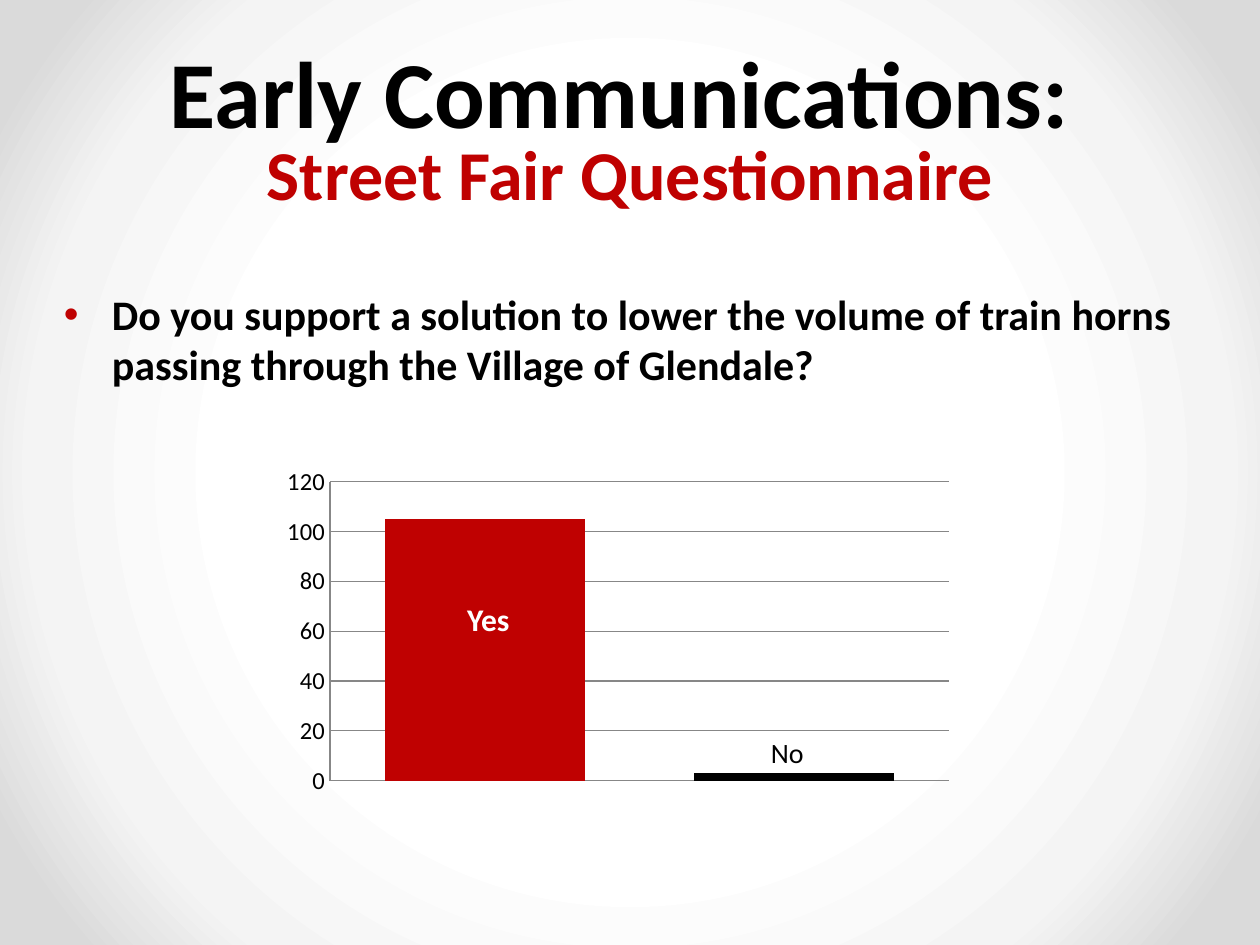
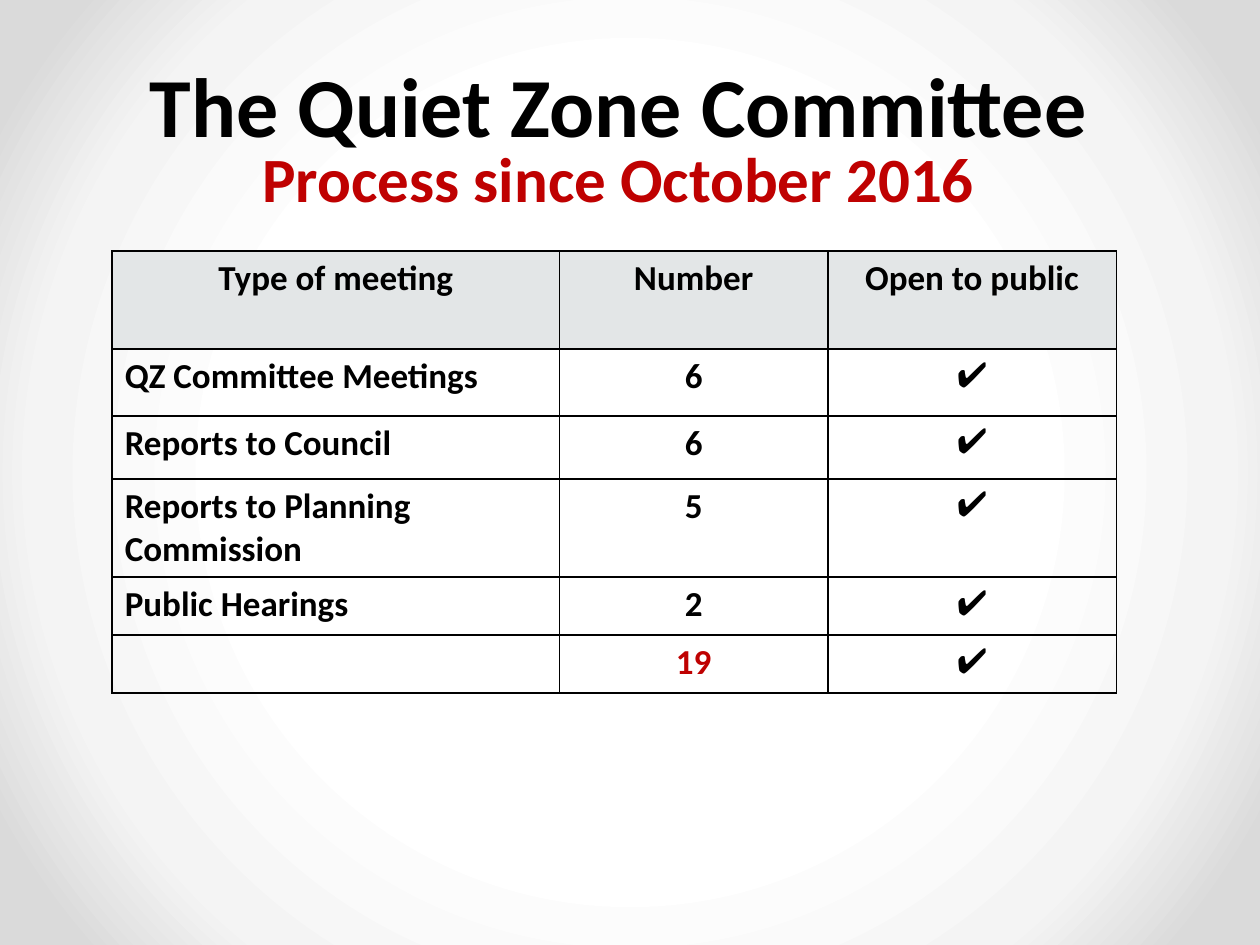
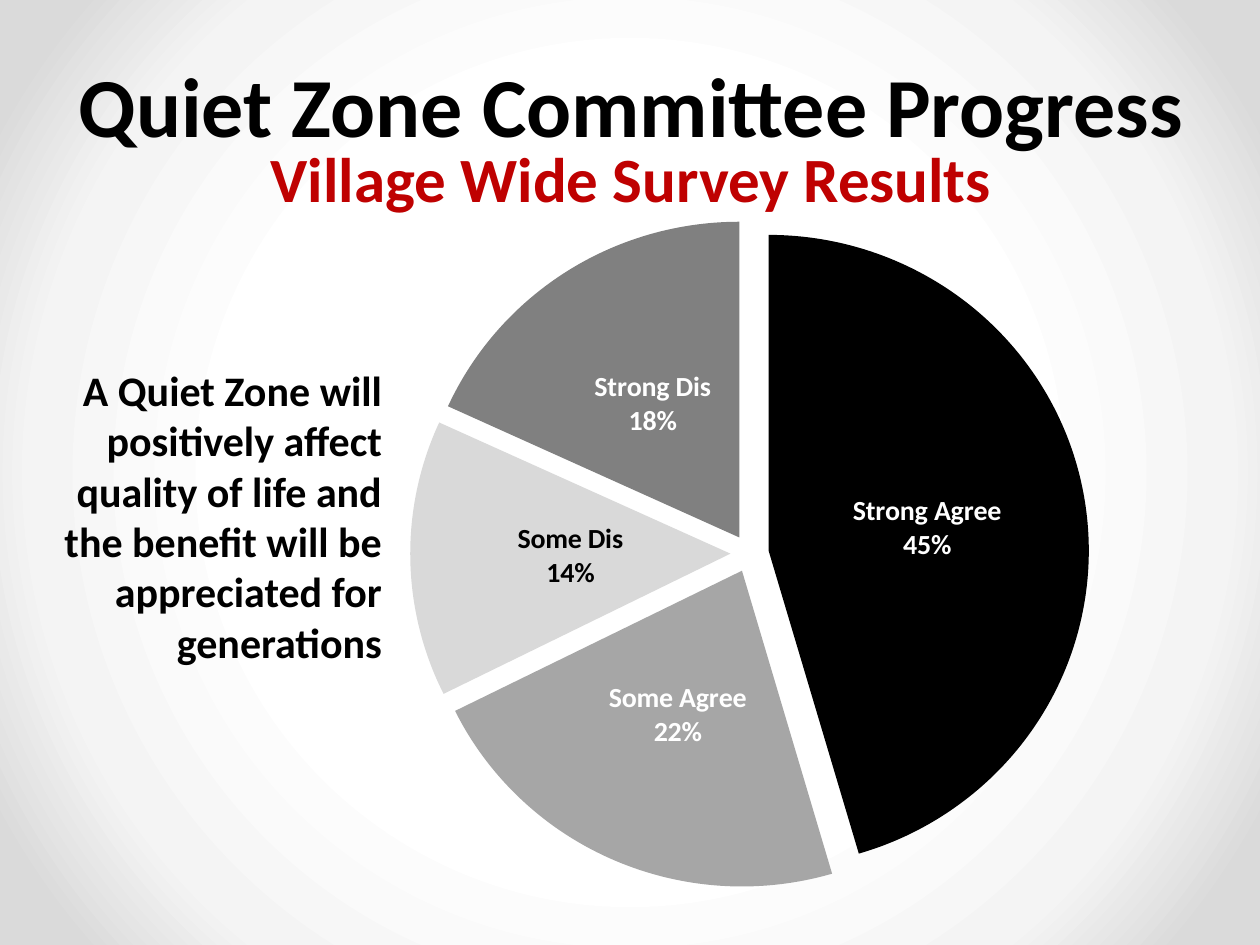
from pptx import Presentation
from pptx.chart.data import CategoryChartData
from pptx.dml.color import RGBColor
from pptx.enum.chart import XL_CHART_TYPE, XL_LABEL_POSITION, XL_TICK_MARK
from pptx.enum.text import MSO_ANCHOR, PP_ALIGN
from pptx.oxml import parse_xml
from pptx.oxml.ns import nsdecls
from pptx.util import Inches, Pt

FONT = "Calibri"
COLORS = {
    "black": "000000", "white": "FFFFFF", "red": "BF0101",
    "header": "E3E6E7", "grid": "878787",
    "light": "D9D9D9", "mid": "A6A6A6", "dark": "808080",
}
BACKDROP_STOPS = [(50, "FFFFFF"), (76, "F4F4F4"), (92, "DADADA")]


def rgb(name):
    return RGBColor.from_string(COLORS[name])


def inches(box):
    return [Inches(length) for length in box]


def style_font(font, size, color="black", bold=False, name=FONT):
    font.name, font.size, font.bold = name, Pt(size), bold
    font.color.rgb = rgb(color)


def write(frame, text, align=PP_ALIGN.LEFT, spacing=None, **font_format):
    """Add a line to the last paragraph of a text frame."""
    paragraph = frame.paragraphs[-1]
    if paragraph.runs:
        paragraph.add_line_break()
    paragraph.alignment = align
    if spacing:
        paragraph.line_spacing = spacing
    run = paragraph.add_run()
    run.text = text
    style_font(run.font, **font_format)


def text_frame(slide, box, anchor=MSO_ANCHOR.TOP):
    frame = slide.shapes.add_textbox(*inches(box)).text_frame
    frame.word_wrap = True
    frame.vertical_anchor = anchor
    return frame


# Shared parts
def set_backdrop(master):
    master.background.fill.gradient()
    stops = "".join(
        f'<a:gs pos="{pos * 1000}"><a:srgbClr val="{color}"/></a:gs>'
        for pos, color in BACKDROP_STOPS)
    gradient = parse_xml(
        f'<a:gradFill {nsdecls("a")} rotWithShape="1"><a:gsLst>{stops}</a:gsLst>'
        '<a:path path="circle"><a:fillToRect l="50000" t="50000" r="50000" b="50000"/>'
        '</a:path></a:gradFill>')
    old_gradient = master.element.xpath("p:cSld/p:bg/p:bgPr/a:gradFill")[0]
    old_gradient.getparent().replace(old_gradient, gradient)


def add_title(slide, box, heading, subheading, size=48, subsize=36):
    frame = text_frame(slide, box, MSO_ANCHOR.BOTTOM)
    centred = {"align": PP_ALIGN.CENTER, "spacing": 0.8, "bold": True}
    write(frame, heading, size=size, **centred)
    write(frame, subheading, size=subsize, color="red", **centred)


def add_single_series_chart(slide, box, kind, categories, values, point_colors):
    data = CategoryChartData(number_format="0")
    data.categories = categories
    data.add_series("Series 1", values)
    chart = slide.shapes.add_chart(kind, *inches(box), data).chart
    chart.has_title = chart.has_legend = False
    style_font(chart.font, 18)
    series = chart.plots[0].series[0]
    for index, color in enumerate(point_colors):
        fill = series.points[index].format.fill
        fill.solid()
        fill.fore_color.rgb = rgb(color)
    return chart


# Questionnaire slide
def add_question(slide, box, question):
    frame = text_frame(slide, box)
    properties = frame.paragraphs[0]._p.get_or_add_pPr()
    properties.set("marL", str(Inches(0.38)))
    properties.set("indent", str(-Inches(0.38)))
    properties.append(parse_xml(
        f'<a:buClr {nsdecls("a")}><a:srgbClr val="{COLORS["red"]}"/></a:buClr>'))
    properties.append(parse_xml(f'<a:buFont {nsdecls("a")} typeface="Arial"/>'))
    properties.append(parse_xml(f'<a:buChar {nsdecls("a")} char="•"/>'))
    write(frame, question, size=24, bold=True)


def add_answer_columns(slide, box):
    chart = add_single_series_chart(
        slide, box, XL_CHART_TYPE.COLUMN_CLUSTERED, ["1", "2"], [105, 3],
        ["red", "black"])
    chart.plots[0].gap_width = 55
    chart.plots[0].vary_by_categories = False
    chart.category_axis.visible = False
    votes = chart.value_axis
    votes.minimum_scale, votes.maximum_scale, votes.major_unit = 0, 120, 20
    votes.major_tick_mark = votes.minor_tick_mark = XL_TICK_MARK.NONE
    style_font(votes.tick_labels.font, 14)
    for line in (votes.format.line, votes.major_gridlines.format.line):
        line.color.rgb = rgb("grid")
        line.width = Pt(0.75)
    # Answers, placed from the chart's corner
    left, top = box[:2]
    write(text_frame(slide, (left + 1.44, top + 1.06, 0.62, 0.4)), "Yes",
          size=18, color="white", bold=True)
    write(text_frame(slide, (left + 3.85, top + 2.14, 0.69, 0.37)), "No", size=16)


# Committee slide
def add_borders(cell):
    properties = cell._tc.get_or_add_tcPr()
    for index, side in enumerate(("lnL", "lnR", "lnT", "lnB")):
        properties.insert(index, parse_xml(
            f'<a:{side} {nsdecls("a")} w="{Pt(1)}"><a:solidFill>'
            f'<a:srgbClr val="{COLORS["black"]}"/></a:solidFill></a:{side}>'))


def add_meeting_table(slide, left, top):
    headings = ("Type of meeting", "Number", "Open to public")
    meetings = [("QZ Committee Meetings", 6), ("Reports to Council", 6),
                ("Reports to Planning Commission", 5), ("Public Hearings", 2)]
    total = sum(number for _, number in meetings)
    rows = [headings] + [(name, str(number), "✔")
                         for name, number in meetings + [("", total)]]
    widths = (3.55, 2.13, 2.29)
    heights = (0.78, 0.53, 0.5, 0.78, 0.46, 0.46)
    table = slide.shapes.add_table(
        len(rows), len(widths),
        *inches((left, top, sum(widths), sum(heights)))).table
    table.first_row = table.horz_banding = False
    for column, width in zip(table.columns, widths):
        column.width = Inches(width)
    for r, (row, height) in enumerate(zip(rows, heights)):
        table.rows[r].height = Inches(height)
        for c, text in enumerate(row):
            cell = table.cell(r, c)
            if r == 0:
                cell.fill.solid()
                cell.fill.fore_color.rgb = rgb("header")
            else:
                cell.fill.background()
            add_borders(cell)
            is_check = text == "✔"
            is_total = r == len(rows) - 1 and c == 1
            if text:
                write(cell.text_frame, text, size=20, bold=not is_check,
                      align=PP_ALIGN.CENTER if r == 0 or c else PP_ALIGN.LEFT,
                      color="red" if is_total else "black",
                      name="Arial" if is_check else FONT)


# Survey slide
def add_survey_pie(slide, box):
    chart = add_single_series_chart(
        slide, box, XL_CHART_TYPE.PIE,
        ["Strong Agree", "Some Agree", "Some Dis", "Strong Dis"],
        [45, 22, 14, 18], ["black", "mid", "light", "dark"])
    chart.plots[0].vary_by_categories = True
    series = chart.plots[0].series[0]
    for slice_fill in series._element.xpath("c:dPt/c:spPr"):
        slice_fill.addprevious(parse_xml(f'<c:explosion {nsdecls("c")} val="6"/>'))
    labels = series.data_labels
    labels.number_format, labels.number_format_is_linked = "0%", False
    light_label = series.points[2].data_label
    for label, color in ((labels, "white"), (light_label, "black")):
        style_font(label.font, 16, color, bold=True)
        label.position = XL_LABEL_POSITION.CENTER
    shown = {"showVal": 0, "showCatName": 1, "showPercent": 1}
    labels.show_value, labels.show_category_name, labels.show_percentage = (
        False, True, True)
    for flag, value in shown.items():
        for element in labels._element.xpath(f"c:dLbl/c:{flag}"):
            element.set("val", str(value))
    for element in labels._element.xpath(".//c:showBubbleSize"):
        element.addnext(parse_xml(f'<c:separator {nsdecls("c")}>\n</c:separator>'))
    chart._chartSpace.xpath("c:chart/c:plotArea")[0].insert(0, parse_xml(
        f'<c:layout {nsdecls("c")}><c:manualLayout><c:layoutTarget val="inner"/>'
        '<c:xMode val="edge"/><c:yMode val="edge"/><c:x val="0"/><c:y val="0.01"/>'
        '<c:w val="1"/><c:h val="0.95"/></c:manualLayout></c:layout>'))
    for spare in chart._chartSpace.xpath("c:chart/c:plotArea/c:layout")[1:]:
        spare.getparent().remove(spare)


def main():
    prs = Presentation()
    prs.slide_width, prs.slide_height = Inches(10), Inches(7.5)
    set_backdrop(prs.slide_master)
    questionnaire, committee, survey = (
        prs.slides.add_slide(prs.slide_layouts[6]) for _ in range(3))

    add_title(questionnaire, (0.5, 0, 9, 1.75), "Early Communications: ",
              "Street Fair Questionnaire", size=54, subsize=40)
    add_question(questionnaire, (0.41, 2.24, 9, 4.71),
                 "Do you support a solution to lower the volume of train horns "
                 "passing through the Village of Glendale?")
    add_answer_columns(questionnaire, (2.17, 3.65, 5.47, 2.72))

    add_title(committee, (0.16, 0, 9.5, 1.75), "The Quiet Zone Committee",
              "Process since October 2016")
    add_meeting_table(committee, 0.89, 1.99)

    write(text_frame(survey, (0.22, 2.83, 2.91, 2.51), MSO_ANCHOR.BOTTOM),
          "A Quiet Zone will positively affect quality of life and the benefit "
          "will be appreciated for generations",
          size=24, bold=True, align=PP_ALIGN.RIGHT)
    add_survey_pie(survey, (1.72, 1.76, 8.46, 5.35))
    add_title(survey, (0.16, 0, 9.7, 1.75), "Quiet Zone Committee Progress",
              "Village Wide Survey Results")
    prs.save("out.pptx")


if __name__ == "__main__":
    main()
